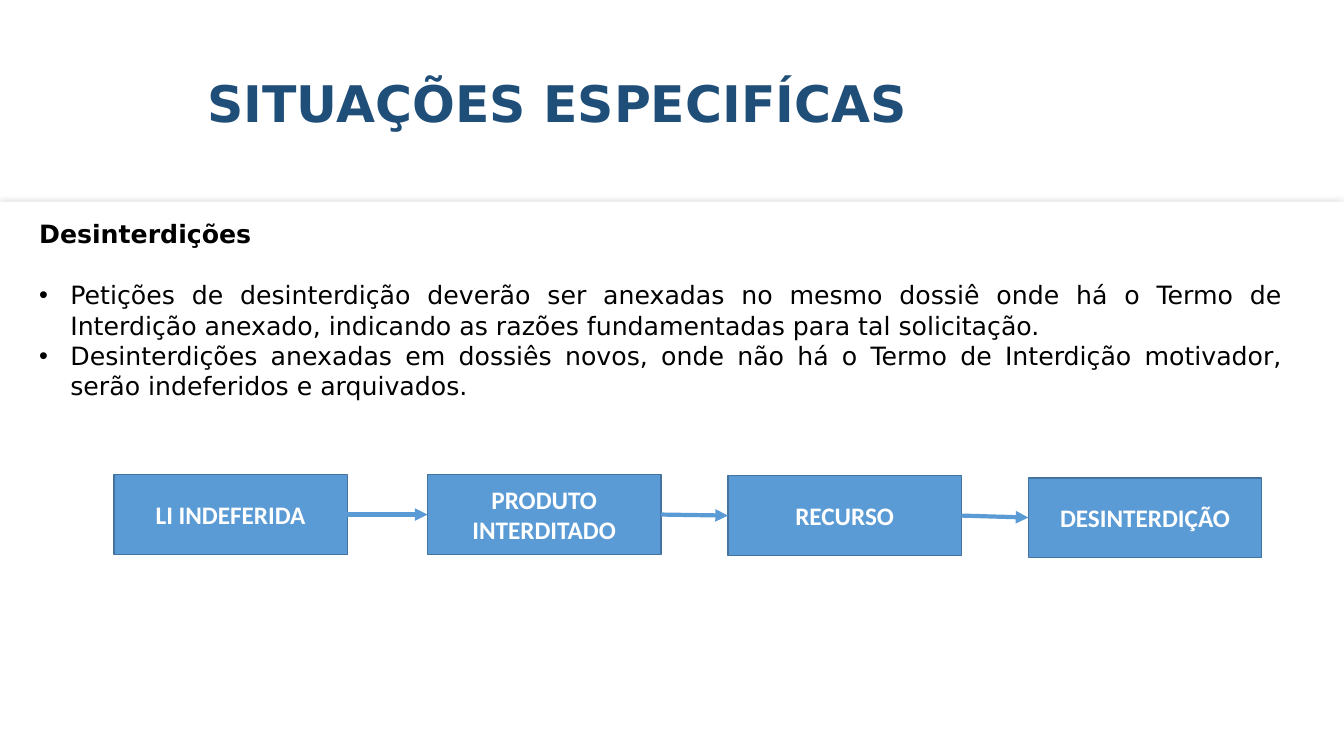
from itertools import pairwise

from lxml.etree import SubElement
from pptx import Presentation
from pptx.dml.color import RGBColor
from pptx.enum.shapes import MSO_CONNECTOR as Connector, MSO_SHAPE as Shape
from pptx.enum.text import MSO_ANCHOR as Anchor, PP_ALIGN as Align
from pptx.oxml.ns import qn
from pptx.util import Inches, Pt

COLORS = {
    "white": "FFFFFF",
    "black": "000000",
    "title": "1F4E79",
    "box": "5B9BD5",
    "border": "43739E",
    "shadow": "A6A6A6",
}
CELL = Inches(0.1)
BOX_WIDTH, BOX_HEIGHT = 23.15, 7.9
INDENT = Inches(0.31)

presentation = Presentation()
presentation.slide_width = Inches(13.33)
presentation.slide_height = Inches(7.5)
slide = presentation.slides.add_slide(presentation.slide_layouts[6])


def add_block(kind, left, top, width, height, fill):
    shape = slide.shapes.add_shape(
        kind, *(round(cells * CELL) for cells in (left, top, width, height))
    )
    shape.shadow.inherit = False
    shape.fill.solid()
    shape.fill.fore_color.rgb = RGBColor.from_string(COLORS[fill])
    shape.line.fill.background()
    return shape


def write(paragraph, text, size=18, font="DejaVu Sans", color="black",
          bold=False, align=Align.LEFT, bullet=False, before=0):
    paragraph.alignment = align
    if before:
        paragraph.space_before = Pt(before)
    if bullet:
        properties = paragraph._p.get_or_add_pPr()
        properties.set("marL", str(INDENT))
        properties.set("indent", str(-INDENT))
        SubElement(properties, qn("a:buFont"), typeface="Arial")
        SubElement(properties, qn("a:buChar"), char="•")
    run = paragraph.add_run()
    run.text = text
    run.font.size = Pt(size)
    run.font.name = font
    run.font.bold = bold
    run.font.color.rgb = RGBColor.from_string(COLORS[color])


panel = add_block(Shape.RECTANGLE, 0, 20, 133.3, 55, "white")
effects = panel._element.spPr.find(qn("a:effectLst"))
shadow = SubElement(effects, qn("a:outerShdw"), blurRad=str(Pt(5)), dist="0", dir="0")
shadow_color = SubElement(shadow, qn("a:srgbClr"), val=COLORS["shadow"])
SubElement(shadow_color, qn("a:alpha"), val="42000")

title = slide.shapes.add_textbox(*(round(cells * CELL) for cells in (19.6, 6.7, 74.3, 7.1)))
title.text_frame.word_wrap = False
write(title.text_frame.paragraphs[0], "SITUAÇÕES ESPECIFÍCAS", size=36, color="title", bold=True)

body = add_block(Shape.RECTANGLE, 2.9, 21.2, 125.3, 25.2, "white")
body_frame = body.text_frame
body_frame.word_wrap = True
body_frame.vertical_anchor = Anchor.TOP
write(body_frame.paragraphs[0], "Desinterdições", bold=True)
bullets = [
    ("Petições de desinterdição deverão ser anexadas no mesmo dossiê onde há o Termo de "
     "Interdição anexado, indicando as razões fundamentadas para tal solicitação.", 22),
    ("Desinterdições anexadas em dossiês novos, onde não há o Termo de Interdição motivador, "
     "serão indeferidos e arquivados.", 0),
]
for text, before in bullets:
    write(body_frame.add_paragraph(), text, align=Align.JUSTIFY, bullet=True, before=before)

steps = [
    ("LI INDEFERIDA", 11.3, 47.1),
    ("PRODUTO INTERDITADO", 42.4, 47.1),
    ("RECURSO", 72.2, 47.2),
    ("DESINTERDIÇÃO", 102, 47.4),
]
boxes = []
for label, left, top in steps:
    box = add_block(Shape.FLOWCHART_PROCESS, left, top, BOX_WIDTH, BOX_HEIGHT, "box")
    box.line.color.rgb = RGBColor.from_string(COLORS["border"])
    box.line.width = Pt(1)
    box.text_frame.word_wrap = True
    box.text_frame.vertical_anchor = Anchor.MIDDLE
    write(box.text_frame.paragraphs[0], label, font="Calibri", color="white",
          bold=True, align=Align.CENTER)
    boxes.append(box)

for source, target in pairwise(boxes):
    arrow = slide.shapes.add_connector(Connector.STRAIGHT, 0, 0, 0, 0)
    arrow.begin_connect(source, 3)
    arrow.end_connect(target, 1)
    arrow.line.color.rgb = RGBColor.from_string(COLORS["box"])
    arrow.line.width = Pt(3)
    SubElement(arrow.line._get_or_add_ln(), qn("a:tailEnd"), type="triangle")
    SubElement(arrow._element.spPr, qn("a:effectLst"))

presentation.save("out.pptx")
